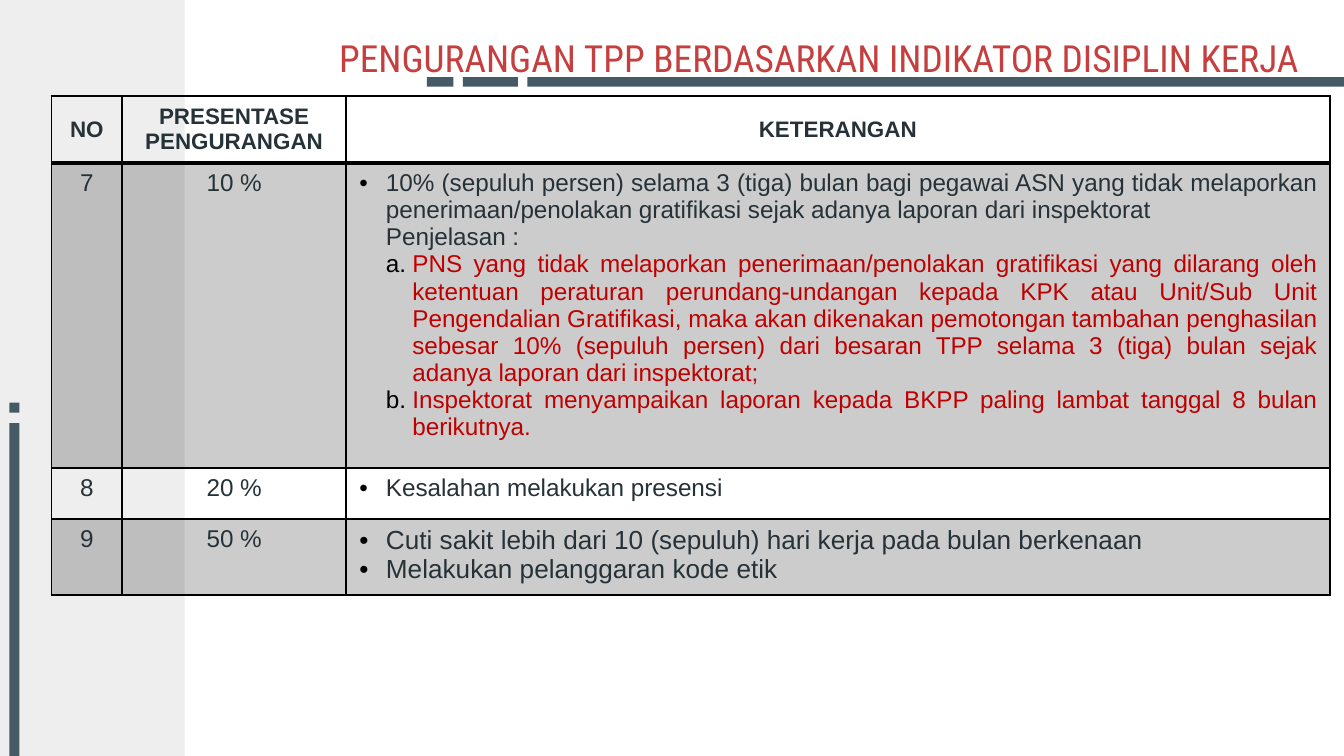
from pptx import Presentation
from pptx.dml.color import RGBColor
from pptx.enum.shapes import MSO_SHAPE as Shape
from pptx.enum.text import MSO_ANCHOR as Anchor, PP_ALIGN as Align
from pptx.oxml.ns import qn
from pptx.util import Cm, Pt
from lxml.etree import SubElement as sub, Element

PALE = RGBColor(0xEE, 0xEE, 0xEE)
SLATE = RGBColor(0x45, 0x5A, 0x64)
ROSE = RGBColor(0xC5, 0x3F, 0x3F)
INK = RGBColor(0x26, 0x32, 0x38)
RED = RGBColor(0xC0, 0x00, 0x00)
BLACK = RGBColor(0, 0, 0)


def style(para, size, color=INK, bold=False, font="Arial"):
    for run in para.runs:
        run.font.name = font
        run.font.size = Pt(size)
        run.font.bold = bold
        run.font.color.rgb = color


def indent(para, left, mark=None):
    """Indent a paragraph (cm) and hang a black bullet or letter before it."""
    props = para._p.get_or_add_pPr()
    props.set("marL", str(Cm(left)))
    props.set("indent", str(Cm(-0.5 if mark else 0)))
    if not mark:
        sub(props, qn("a:buNone"))
        return
    sub(sub(props, qn("a:buClr")), qn("a:srgbClr"), val=str(BLACK))
    sub(props, qn("a:buFont"), typeface="Arial")
    if mark == "•":
        sub(props, qn("a:buChar"), char=mark)
    else:
        sub(props, qn("a:buAutoNum"), type=mark)


deck = Presentation()
deck.slide_width, deck.slide_height = Cm(25.4), Cm(14.29)
slide = deck.slides.add_slide(deck.slide_layouts[6])

# Side panel and accent bars
bars = [
    (0, 0, 3.49, 14.29, PALE),
    (9.97, 1.46, 15.43, 0.18, SLATE),
    (8.75, 1.46, 1.04, 0.18, SLATE),
    (8.07, 1.46, 0.5, 0.18, SLATE),
    (0.18, 8, 0.19, 6.29, SLATE),
    (0.18, 7.61, 0.19, 0.19, SLATE),
]
for x, y, w, h, color in bars:
    bar = slide.shapes.add_shape(Shape.RECTANGLE, Cm(x), Cm(y), Cm(w), Cm(h))
    bar.shadow.inherit = False
    bar.fill.solid()
    bar.fill.fore_color.rgb = color
    bar.line.fill.background()

# Title
title = slide.shapes.add_textbox(Cm(5.74), Cm(0), Cm(19.07), Cm(1.78))
frame = title.text_frame
frame.word_wrap = True
frame.margin_left = frame.margin_right = Cm(0.25)
frame.margin_top = frame.margin_bottom = Cm(0.25)
frame.text = "PENGURANGAN TPP BERDASARKAN INDIKATOR DISIPLIN KERJA"
head = frame.paragraphs[0]
head.alignment = Align.RIGHT
head.line_spacing = 1.5
style(head, 20, ROSE, font="Roboto Condensed")

# Table: each note is (text, left indent, mark, size, colour)
LETTER = "alphaLcPeriod"
rows = [
    ("7", "10 %", [
        ("10% (sepuluh persen) selama 3 (tiga) bulan bagi pegawai ASN yang tidak "
         "melaporkan penerimaan/penolakan gratifikasi sejak adanya laporan dari "
         "inspektorat", 0.5, "•", 13, INK),
        ("Penjelasan :", 0.5, None, 13, INK),
        ("PNS yang tidak melaporkan penerimaan/penolakan gratifikasi yang dilarang "
         "oleh ketentuan peraturan perundang-undangan kepada KPK atau Unit/Sub Unit "
         "Pengendalian Gratifikasi, maka akan dikenakan pemotongan tambahan "
         "penghasilan sebesar 10% (sepuluh persen) dari besaran TPP selama 3 (tiga) "
         "bulan sejak adanya laporan dari inspektorat;", 1, LETTER, 13, RED),
        ("Inspektorat menyampaikan laporan kepada BKPP paling lambat tanggal 8 "
         "bulan berikutnya.", 1, LETTER, 13, RED),
    ]),
    ("8", "20 %", [("Kesalahan melakukan presensi", 0.5, "•", 13, INK)]),
    ("9", "50 %", [
        ("Cuti sakit lebih dari 10 (sepuluh) hari kerja pada bulan berkenaan",
         0.5, "•", 14, INK),
        ("Melakukan pelanggaran kode etik", 0.5, "•", 14, INK),
    ]),
]
table = slide.shapes.add_table(
    4, 3, Cm(0.97), Cm(1.81), Cm(24.16), Cm(8.94)).table
table.first_row = table.horz_banding = False
for col, width in zip(table.columns, (1.34, 4.23, 18.59)):
    col.width = Cm(width)
for row, height in zip(table.rows, (1.23, 5.37, 0.96, 1.37)):
    row.height = Cm(height)

heads = ("NO", "PRESENTASE\nPENGURANGAN", "KETERANGAN")
for cell, text in zip(table.rows[0].cells, heads):
    cell.text_frame.text = text
    cell.vertical_anchor = Anchor.MIDDLE
    for para in cell.text_frame.paragraphs:
        para.alignment = Align.CENTER
        style(para, 12, bold=True)

for i, (num, cut, notes) in enumerate(rows, 1):
    for j, text in enumerate((num, cut)):
        cell = table.cell(i, j)
        cell.text_frame.text = text
        para = cell.text_frame.paragraphs[0]
        para.alignment = Align.CENTER
        style(para, 13)
    frame = table.cell(i, 2).text_frame
    frame.text = "\n".join(note[0] for note in notes)
    for para, (_, left, mark, size, color) in zip(frame.paragraphs, notes):
        para.alignment = Align.JUSTIFY
        indent(para, left, mark)
        style(para, size, color)

# Cell shading and borders
for i, row in enumerate(table.rows):
    for cell in row.cells:
        props = cell._tc.get_or_add_tcPr()
        if i % 2:
            cell.fill.solid()
            cell.fill.fore_color.rgb = BLACK
            tint = props.find(qn("a:solidFill"))[0]
            sub(tint, qn("a:alpha"), val="20000")
        else:
            cell.fill.background()
        for k, side in enumerate("LRTB"):
            thick = (i, side) in ((0, "B"), (1, "T"))
            edge = Element(qn("a:ln" + side), w=str(Pt(2 if thick else 1)))
            sub(sub(edge, qn("a:solidFill")), qn("a:srgbClr"), val=str(BLACK))
            props.insert(k, edge)

deck.save("out.pptx")
